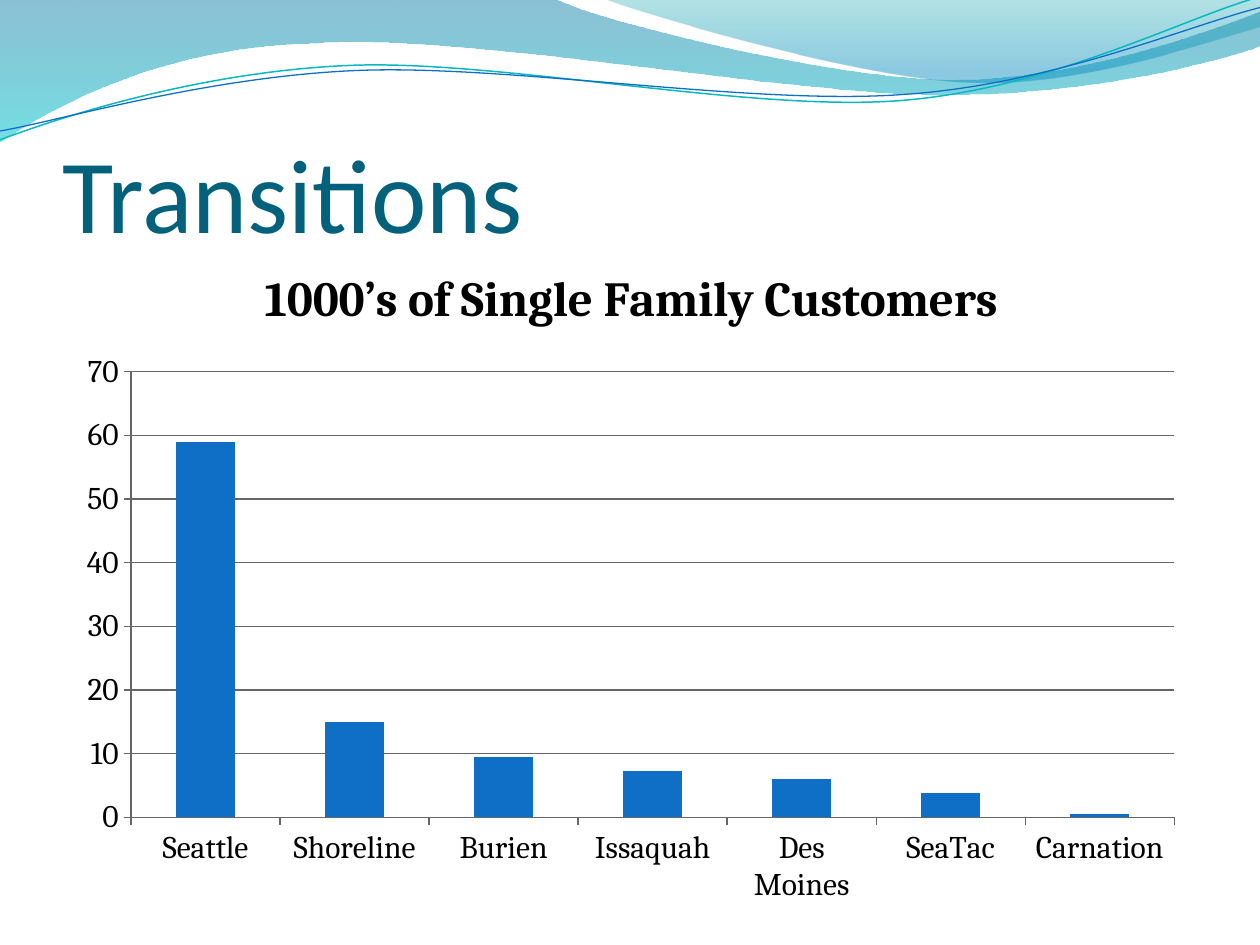
from lxml import etree
from pptx import Presentation
from pptx import util as u
from pptx.chart.data import CategoryChartData
from pptx.dml.color import RGBColor
from pptx.enum import chart as ch, text
from pptx.oxml.ns import qn

COLUMNS, ROWS = 10, 7.5  # one grid cell is one inch


def color(code):
    return RGBColor.from_string(code)


def format_font(font, name="Cambria", size=18, ink="000000", bold=False):
    font.name, font.size, font.bold = name, u.Pt(size), bold
    font.color.rgb = color(ink)


def bend(shape, segments):
    """Merge each run of three drawn lines that stands for a cubic curve."""
    lines = iter(list(shape._element.spPr.iter(qn("a:lnTo"))))
    for segment in segments:
        group = [next(lines) for _ in segment]
        if len(group) == 3:
            curve = etree.Element(qn("a:cubicBezTo"))
            group[0].addprevious(curve)
            for line in group:
                curve.append(line[0])
                line.getparent().remove(line)


def place(parent, target=None, **shares):
    """Add a manual layout, in shares of the chart's size, to a title or plot area."""
    for old in parent.findall(qn("c:layout")):
        parent.remove(old)
    layout = etree.Element(qn("c:layout"))
    manual = etree.SubElement(layout, qn("c:manualLayout"))
    settings = {"layoutTarget": target} if target else {}
    settings.update(xMode="edge", yMode="edge", **shares)
    for name, value in settings.items():
        etree.SubElement(manual, qn("c:" + name)).set("val", str(value))
    words = parent.find(qn("c:tx"))
    if words is None:
        parent.insert(0, layout)
    else:
        words.addnext(layout)


class SlideBuilder:
    title_color = "04617B"
    series_color = "0F6FC6"
    axis_color = "666666"

    def __init__(self, deck):
        self.page = deck.slides.add_slide(deck.slide_layouts[6])

    def outline(self, start, segments, close):
        """Draw segments of one point (line) or three points (cubic curve)."""
        first, *others = [tuple(map(u.Inches, point))
                          for point in (start, *(p for segment in segments for p in segment))]
        builder = self.page.shapes.build_freeform(*first)
        builder.add_line_segments(others, close=close)
        shape = builder.convert_to_shape()
        shape.shadow.inherit = False
        bend(shape, segments)
        return shape

    def wave(self, start, segments, stops):
        """Draw a filled band; stops are (position, color, opacity percent)."""
        shape = self.outline(start, segments, True)
        shape.line.fill.background()
        shape.fill.gradient()
        shape.fill.gradient_angle = 270
        for stop, (position, code, _) in zip(shape.fill.gradient_stops, stops):
            stop.position = position
            stop.color.rgb = color(code)
        inks = shape._element.spPr.iter(qn("a:srgbClr"))
        for ink, (_, _, opacity) in zip(list(inks), stops):
            etree.SubElement(ink, qn("a:alpha")).set("val", str(opacity * 1000))

    def strand(self, start, segments, ink, width):
        shape = self.outline(start, segments, False)
        shape.fill.background()
        shape.line.color.rgb = color(ink)
        shape.line.width = u.Pt(width)

    def title(self, words, column, row, columns, rows):
        box = self.page.shapes.add_textbox(*map(u.Inches, (column, row, columns, rows)))
        frame = box.text_frame
        frame.word_wrap = True
        frame.vertical_anchor = text.MSO_ANCHOR.BOTTOM
        frame.margin_left = frame.margin_right = frame.margin_bottom = 0
        frame.margin_top = u.Inches(0.05)
        span = frame.paragraphs[0].add_run()
        span.text = words
        format_font(span.font, name="Calibri", size=60, ink=self.title_color)

    def column_chart(self, heading, values, column, row, columns, rows):
        data = CategoryChartData(number_format="#,##0")
        data.categories = list(values)
        data.add_series("Series 1", list(values.values()))
        chart = self.page.shapes.add_chart(
            ch.XL_CHART_TYPE.COLUMN_CLUSTERED,
            *map(u.Inches, (column, row, columns, rows)), data).chart
        format_font(chart.font)
        chart.has_legend = False
        chart.has_title = True
        span = chart.chart_title.text_frame.paragraphs[0].add_run()
        span.text = heading
        format_font(span.font, size=28, bold=True)
        chart.chart_title.include_in_layout = False
        place(chart.chart_title._element, x=0.17, y=0.01)
        place(chart._chartSpace.chart.plotArea, "inner", x=0.06, y=0.18, w=0.92, h=0.67)

        plot = chart.plots[0]
        plot.gap_width = 150
        plot.vary_by_categories = False
        fill = plot.series[0].format.fill
        fill.solid()
        fill.fore_color.rgb = color(self.series_color)

        scale = chart.value_axis
        scale.minimum_scale, scale.maximum_scale, scale.major_unit = 0, 70, 10
        scale.has_major_gridlines = True
        lines = [scale.major_gridlines.format.line]
        for axis in (scale, chart.category_axis):
            axis.major_tick_mark = ch.XL_TICK_MARK.OUTSIDE
            lines.append(axis.format.line)
        for line in lines:
            line.color.rgb = color(self.axis_color)
            line.width = u.Pt(0.75)


def main():
    deck = Presentation()
    deck.slide_width, deck.slide_height = u.Inches(COLUMNS), u.Inches(ROWS)
    slide = SlideBuilder(deck)

    slide.wave((0, 0), [
        [(4.4, -0.01)],
        [(4.76, 0.17), (6.64, 0.63), (7.58, 0.63)],
        [(8.53, 0.63), (9.58, 0.26), (10, 0.09)],
        [(10.01, 0.36)],
        [(9.83, 0.44), (8.7, 0.76), (7.46, 0.75)],
        [(6.22, 0.75), (3.82, 0.28), (2.57, 0.34)],
        [(1.29, 0.36), (0.46, 0.83), (-0.01, 1.13)],
        [(0, 0)],
    ], [(0, "0074A1", 45), (1, "00C6CF", 55)])
    slide.wave((4.79, -0.01), [
        [(5.09, 0.11), (6.82, 0.62), (7.69, 0.65)],
        [(8.56, 0.69), (9.61, 0.32), (10, 0.21)],
        [(10, 0)],
        [(4.79, -0.01)],
    ], [(0, "00A1A9", 30), (0.8, "008BBF", 45)])
    slide.strand((0, 1.11), [
        [(0.48, 0.93), (1.58, 0.57), (2.77, 0.52)],
        [(3.95, 0.47), (5.93, 0.89), (7.13, 0.8)],
        [(8.33, 0.71), (9.38, 0.15), (9.98, -0.02)],
    ], "0AB8BF", 0.85)
    slide.strand((0, 1.04), [
        [(0.47, 0.96), (1.64, 0.61), (2.83, 0.56)],
        [(4.03, 0.51), (5.97, 0.84), (7.17, 0.75)],
        [(8.36, 0.67), (9.41, 0.21), (10, 0.06)],
    ], "0F6FC6", 0.75)

    slide.title("Transitions", 0.5, 0.77, 9, 1.25)
    slide.column_chart("1000’s of Single Family Customers", {
        "Seattle": 59, "Shoreline": 15, "Burien": 9.4, "Issaquah": 7.2,
        "Des Moines": 6.1, "SeaTac": 3.9, "Carnation": 0.5,
    }, 0.5, 2, 9, 5.28)
    deck.save("out.pptx")


if __name__ == "__main__":
    main()
